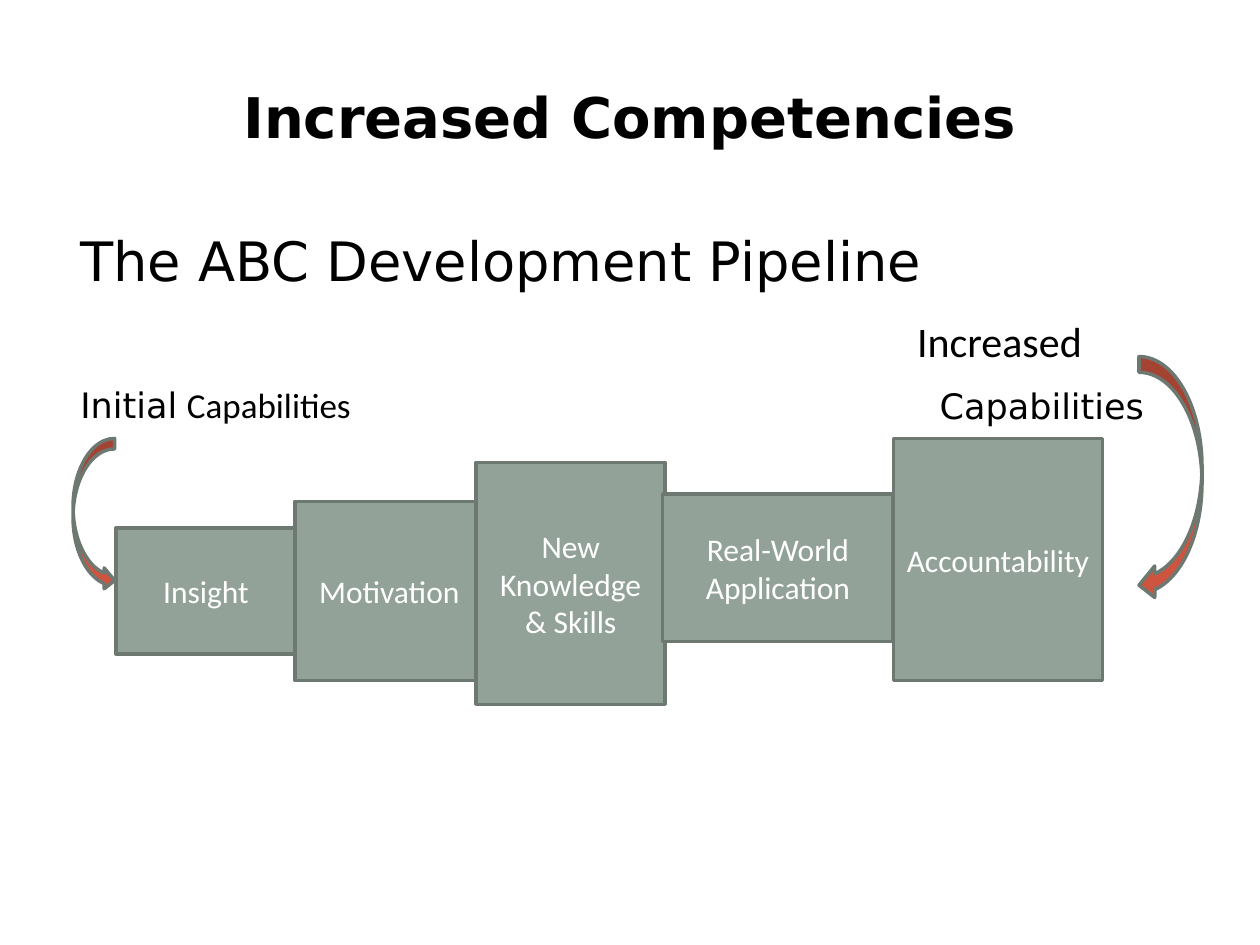
from dataclasses import dataclass

from pptx import Presentation
from pptx.dml.color import RGBColor
from pptx.enum.shapes import MSO_SHAPE
from pptx.enum.text import MSO_ANCHOR, PP_ALIGN
from pptx.util import Inches, Pt


@dataclass(frozen=True)
class Theme:
    """Colours, fonts and type sizes of the slide."""
    ink: str = "000000"
    light: str = "FFFFFF"
    stage: str = "93A299"
    outline: str = "6D7871"
    arrow: str = "CF543F"
    head_font: str = "DejaVu Sans"
    body_font: str = "Calibri"
    title: int = 32
    subtitle: int = 31
    large: int = 24
    label: int = 20
    box: int = 18


T = Theme()

STAGES = [
    (("Insight",), 0.92, 4.19, 1.43, 1),
    (("Motivation",), 2.34, 3.98, 1.5, 1.42),
    (("New Knowledge & Skills",), 3.78, 3.67, 1.5, 1.92),
    (("Real-World", "Application"), 5.26, 3.92, 1.83, 1.17),
    (("Accountability",), 7.09, 3.48, 1.66, 1.92),
]


def add_run(p, text, size, font=T.body_font, color=T.ink, bold=False):
    """Append formatted text to a paragraph."""
    r = p.add_run()
    r.text = text
    r.font.size = Pt(size)
    r.font.name = font
    r.font.bold = bold
    r.font.color.rgb = RGBColor.from_string(color)


def set_title(s, text):
    """Place and format the title placeholder."""
    sp = s.shapes.title
    sp.left, sp.top, sp.width, sp.height = map(Inches, (0.5, 0.3, 9, 1.25))
    tf = sp.text_frame
    tf.vertical_anchor = MSO_ANCHOR.MIDDLE
    p = tf.paragraphs[0]
    p.alignment = PP_ALIGN.CENTER
    add_run(p, text, T.title, font=T.head_font, bold=True)


def add_label(s, runs, left, top, width, height):
    """Add a one-line text box from (text, size, font) runs."""
    sp = s.shapes.add_textbox(*map(Inches, (left, top, width, height)))
    tf = sp.text_frame
    tf.word_wrap = True
    tf.margin_top = tf.margin_bottom = 0
    for text, size, font in runs:
        add_run(tf.paragraphs[0], text, size, font=font)


def add_block(s, kind, fill, left, top, width, height):
    """Add a filled and outlined preset shape."""
    sp = s.shapes.add_shape(kind, *map(Inches, (left, top, width, height)))
    sp.shadow.inherit = False
    sp.fill.solid()
    sp.fill.fore_color.rgb = RGBColor.from_string(fill)
    sp.line.color.rgb = RGBColor.from_string(T.outline)
    sp.line.width = Pt(2)
    return sp


def add_stage(s, lines, *box):
    """Add a pipeline stage with centred lines of text."""
    tf = add_block(s, MSO_SHAPE.RECTANGLE, T.stage, *box).text_frame
    tf.word_wrap = True
    tf.vertical_anchor = MSO_ANCHOR.MIDDLE
    for i, line in enumerate(lines):
        p = tf.add_paragraph() if i else tf.paragraphs[0]
        p.alignment = PP_ALIGN.CENTER
        add_run(p, line, T.box, color=T.light)


def main():
    """Build and save the slide."""
    prs = Presentation()
    prs.slide_width, prs.slide_height = Inches(10), Inches(7.5)
    s = prs.slides.add_slide(prs.slide_layouts[5])
    set_title(s, "Increased Competencies")
    add_label(s, [("The ABC Development Pipeline", T.subtitle, T.head_font)],
              0.54, 1.8, 9, 0.5)
    add_label(s, [("Increased", T.large, T.body_font)], 7.18, 2.5, 1.8, 0.41)
    add_label(s, [("Initial", T.label, T.head_font),
                  (" ", T.large, T.body_font),
                  ("Capabilities", T.label, T.body_font)], 0.54, 2.99, 3, 0.41)
    add_label(s, [("Capabilities", T.label, T.head_font)], 7.36, 3.05, 2, 0.33)
    for lines, *box in STAGES:
        add_stage(s, lines, *box)
    add_block(s, MSO_SHAPE.CURVED_LEFT_ARROW, T.arrow, 9.04, 2.83, 0.5, 1.94)
    add_block(s, MSO_SHAPE.CURVED_RIGHT_ARROW, T.arrow, 0.58, 3.48, 0.33, 1.21)
    prs.save("out.pptx")


if __name__ == "__main__":
    main()
